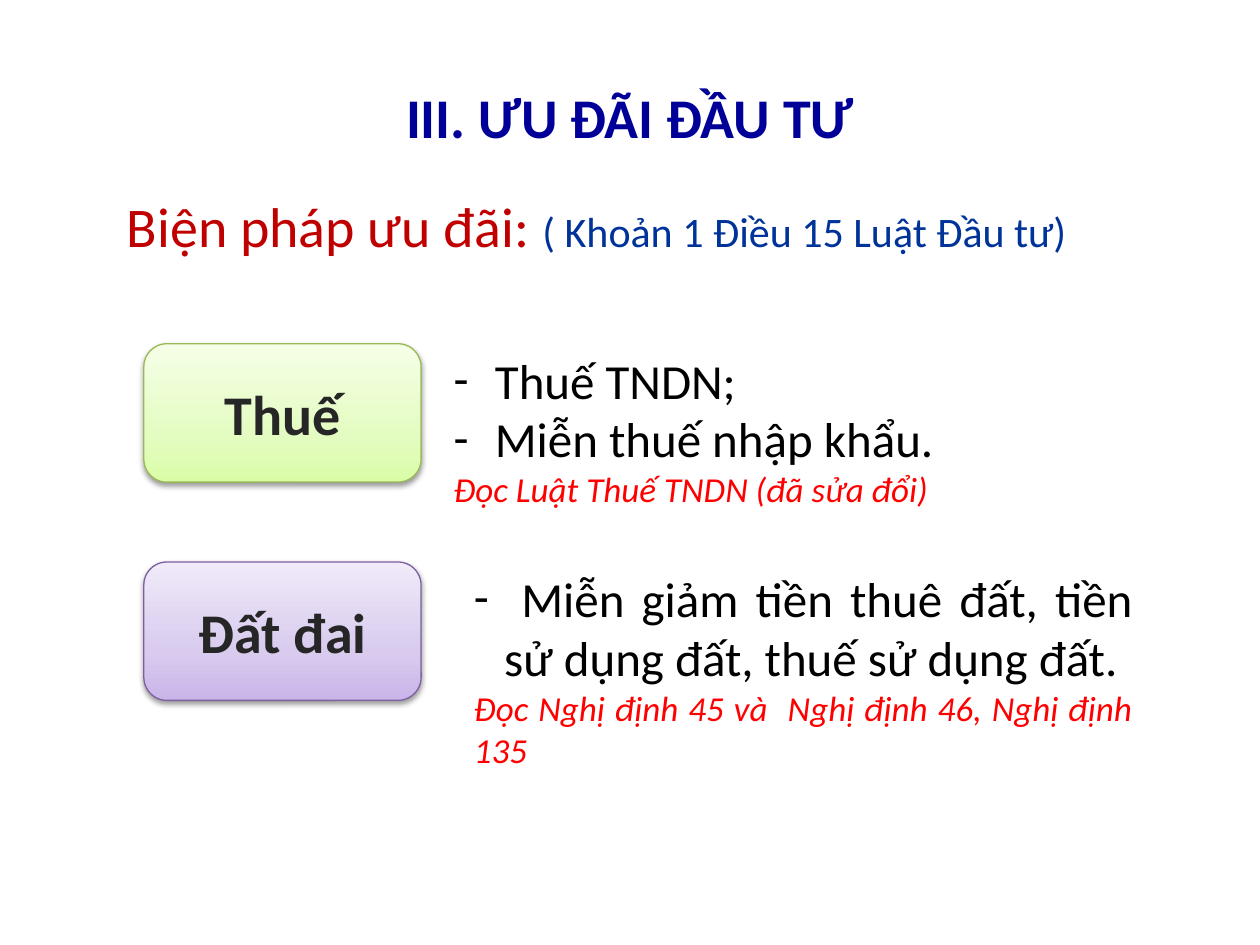
from copy import deepcopy
from dataclasses import dataclass

from lxml.etree import SubElement
from pptx import Presentation
from pptx.dml.color import RGBColor
from pptx.enum.shapes import MSO_SHAPE
from pptx.enum.text import MSO_ANCHOR, MSO_AUTO_SIZE, PP_ALIGN
from pptx.oxml.ns import qn
from pptx.util import Cm, Pt


@dataclass(frozen=True)
class Theme:
    font: str = "Calibri"
    title: str = "000099"
    heading: str = "C00000"
    citation: str = "003399"
    label: str = "262626"
    body: str = "000000"
    note: str = "FF0000"
    # Each box: line colour, then gradient colours from bottom to top
    green: tuple = ("98B955", "DAFDA7", "E4FCC2", "F5FFE7")
    purple: tuple = ("7D60A0", "C9B5E8", "D8CBEE", "F0EAF9")
    gradient_positions: tuple = (0, 0.35, 1)
    large: int = 32
    list_size: int = 28
    citation_size: int = 24
    note_size: int = 20


class SlideBuilder:
    def __init__(self, slide, theme):
        self.slide = slide
        self.theme = theme

    def place(self, shape, left, top, width, height):
        shape.left, shape.top = Cm(left), Cm(top)
        shape.width, shape.height = Cm(width), Cm(height)

    def style(self, run, size, color, bold=False, italic=False):
        font = run.font
        font.name, font.size = self.theme.font, Pt(size)
        font.bold, font.italic = bold, italic
        font.color.rgb = RGBColor.from_string(color)

    def title(self, text, *box):
        shape = self.slide.shapes.title
        self.place(shape, *box)
        shape.text_frame.text = text
        shape.text_frame.vertical_anchor = MSO_ANCHOR.MIDDLE
        paragraph = shape.text_frame.paragraphs[0]
        paragraph.alignment = PP_ALIGN.CENTER
        self.style(paragraph.runs[0], self.theme.large, self.theme.title, bold=True)

    def heading(self, text, citation, *box):
        frame = self.slide.shapes.add_textbox(*map(Cm, box)).text_frame
        frame.word_wrap = True
        frame.text = text
        paragraph = frame.paragraphs[0]
        self.style(paragraph.runs[0], self.theme.large, self.theme.heading)
        run = paragraph.add_run()
        run.text = citation
        self.style(run, self.theme.citation_size, self.theme.citation)

    def label_box(self, text, colors, *box):
        shape = self.slide.shapes.add_shape(MSO_SHAPE.ROUNDED_RECTANGLE, *map(Cm, box))
        line_color, *gradient_colors = colors
        shape.line.color.rgb = RGBColor.from_string(line_color)
        shape.line.width = Pt(0.75)
        self.gradient(shape, gradient_colors)
        self.soft_shadow(shape)
        frame = shape.text_frame
        frame.text = text
        frame.vertical_anchor = MSO_ANCHOR.MIDDLE
        paragraph = frame.paragraphs[0]
        paragraph.alignment = PP_ALIGN.CENTER
        self.style(paragraph.runs[0], self.theme.large, self.theme.label, bold=True)

    def gradient(self, shape, colors):
        shape.fill.gradient()
        shape.fill.gradient_angle = 90
        # A new gradient has two stops; add the middle one
        first_stop = shape._element.spPr.find(".//" + qn("a:gs"))
        first_stop.addnext(deepcopy(first_stop))
        stops = shape.fill.gradient_stops
        for stop, color, position in zip(stops, colors, self.theme.gradient_positions):
            stop.color.rgb = RGBColor.from_string(color)
            stop.position = position

    def soft_shadow(self, shape):
        shape.shadow.inherit = False
        effects = shape._element.spPr.find(qn("a:effectLst"))
        shadow = SubElement(effects, qn("a:outerShdw"), blurRad="40000",
                            dist="20000", dir="5400000", rotWithShape="0")
        color = SubElement(shadow, qn("a:srgbClr"), val="000000")
        SubElement(color, qn("a:alpha"), val="38000")

    def dash_list(self, placeholder_index, items, note, *box):
        shape = self.slide.placeholders[placeholder_index]
        self.place(shape, *box)
        frame = shape.text_frame
        frame.text = "\n".join([*items, note])
        frame.auto_size = MSO_AUTO_SIZE.NONE
        frame.vertical_anchor = MSO_ANCHOR.TOP
        *item_paragraphs, note_paragraph = frame.paragraphs
        for paragraph in item_paragraphs:
            self.style(paragraph.runs[0], self.theme.list_size, self.theme.body)
            self.bullet(paragraph, "-", Cm(0.61))
        self.style(note_paragraph.runs[0], self.theme.note_size, self.theme.note, italic=True)
        self.bullet(note_paragraph, None, 0)

    def bullet(self, paragraph, character, indent):
        paragraph.alignment = PP_ALIGN.JUSTIFY
        paragraph.space_before = Pt(0)
        properties = paragraph._p.get_or_add_pPr()
        properties.set("marL", str(indent))
        properties.set("indent", str(-indent))
        if character:
            SubElement(properties, qn("a:buFont"), typeface=self.theme.font)
            SubElement(properties, qn("a:buChar"), char=character)
        else:
            SubElement(properties, qn("a:buNone"))


def main():
    presentation = Presentation()
    presentation.slide_width, presentation.slide_height = Cm(25.4), Cm(19.05)
    two_content = presentation.slide_layouts[3]
    theme = Theme()
    builder = SlideBuilder(presentation.slides.add_slide(two_content), theme)

    # Title and heading
    builder.title("III. ƯU ĐÃI ĐẦU TƯ", 1.27, 0.76, 22.86, 3.18)
    builder.heading("Biện pháp ưu đãi: ", "( Khoản 1 Điều 15 Luật Đầu tư)",
                    2.31, 3.73, 20.6, 1.63)

    # Incentive rows: label box on the left, list on the right
    tax_top, land_top = 6.93, 11.33
    for text, colors, top in (("Thuế", theme.green, tax_top),
                              ("Đất đai", theme.purple, land_top)):
        builder.label_box(text, colors, 2.9, top, 5.59, 2.79)
    builder.dash_list(1, [" Thuế TNDN;", " Miễn thuế nhập khẩu."],
                      "Đọc Luật Thuế TNDN (đã sửa đổi)",
                      8.89, tax_top, 11.81, 3.51)
    builder.dash_list(2, [" Miễn giảm tiền thuê đất, tiền sử dụng đất, thuế sử dụng đất."],
                      "Đọc Nghị định 45 và  Nghị định 46, Nghị định 135",
                      9.3, land_top, 13.79, 4.37)

    presentation.save("out.pptx")


if __name__ == "__main__":
    main()
